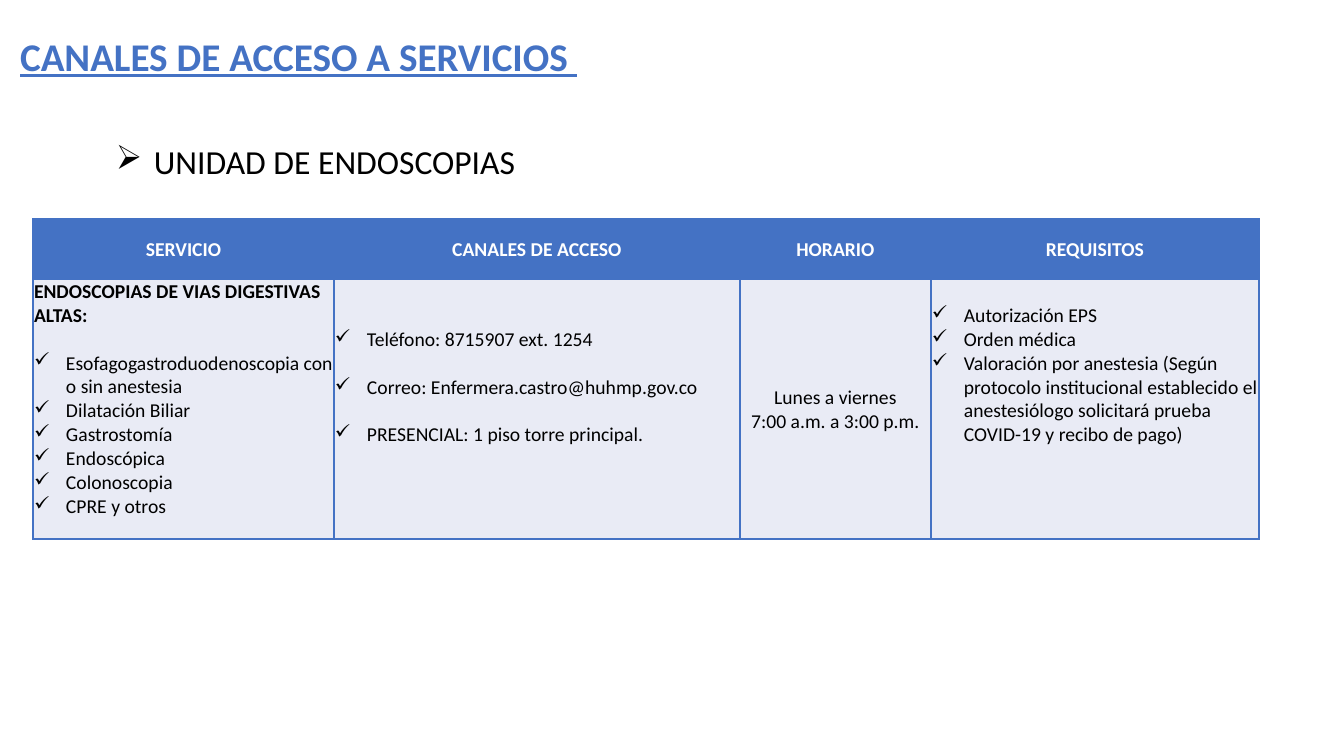
from dataclasses import dataclass

from lxml.etree import SubElement
from pptx import Presentation
from pptx.dml.color import RGBColor
from pptx.enum.text import MSO_ANCHOR as Anchor, MSO_AUTO_SIZE as AutoSize, PP_ALIGN as Align
from pptx.oxml.ns import qn
from pptx.util import Pt

EMU_PER_PX = 914400 / 100.8
LINE_GAP = 17  # points, one line of table text


@dataclass(frozen=True)
class Theme:
    font: str = "Calibri"
    blue: str = "4472C4"
    pale: str = "E9EBF5"
    white: str = "FFFFFF"
    black: str = "000000"
    title_size: int = 28
    subtitle_size: int = 24
    table_size: int = 14


THEME = Theme()

HEADINGS = ["SERVICIO", "CANALES DE ACCESO", "HORARIO", "REQUISITOS"]
COLUMN_WIDTHS = [301, 406, 191, 328]
SERVICES = [
    "Esofagogastroduodenoscopia con o sin anestesia", "Dilatación Biliar", "Gastrostomía",
    "Endoscópica", "Colonoscopia", "CPRE y otros",
]
CHANNELS = [
    "Teléfono: 8715907 ext. 1254",
    "Correo: Enfermera.castro@huhmp.gov.co",
    "PRESENCIAL: 1 piso torre principal.",
]
HOURS = ["Lunes a viernes", "7:00 a.m. a 3:00 p.m."]
REQUIREMENTS = [
    "Autorización EPS",
    "Orden médica",
    "Valoración por anestesia (Según protocolo institucional establecido el "
    "anestesiólogo solicitará prueba COVID-19 y recibo de pago)",
]


def px(length):
    return round(length * EMU_PER_PX)


def place(shape, box):
    shape.left, shape.top, shape.width, shape.height = map(px, box)


def write(frame, text, size=THEME.table_size, color=THEME.black, bold=False, underline=False,
          align=Align.LEFT, bullet=None, indent=32, before=0, spacing=None):
    """Write one paragraph, filling the empty first one before adding more."""
    first = frame.paragraphs[0]
    paragraph = frame.add_paragraph() if first.runs else first
    if bullet:
        properties = paragraph._p.get_or_add_pPr()
        properties.set("marL", str(px(indent)))
        properties.set("indent", str(-px(indent)))
        SubElement(properties, qn("a:buChar")).set("char", bullet)
    paragraph.alignment = align
    if before:
        paragraph.space_before = Pt(before)
    if spacing:
        paragraph.line_spacing = spacing
    run = paragraph.add_run()
    run.text = text
    font = run.font
    font.name, font.size, font.bold, font.underline = THEME.font, Pt(size), bold, underline
    font.color.rgb = RGBColor.from_string(color)


def write_checklist(frame, items, gap=0, first_gap=0):
    for index, item in enumerate(items):
        write(frame, item, bullet="✓", before=gap if index else first_gap)


def add_title(slide, box):
    title = slide.shapes.title
    place(title, box)
    frame = title.text_frame
    frame.auto_size, frame.vertical_anchor = AutoSize.NONE, Anchor.BOTTOM
    write(frame, "CANALES DE ACCESO A SERVICIOS ", size=THEME.title_size, color=THEME.blue,
          bold=True, underline=True, spacing=0.9)


def add_subtitle(slide, box):
    frame = slide.shapes.add_textbox(*map(px, box)).text_frame
    frame.word_wrap = True
    write(frame, "UNIDAD DE ENDOSCOPIAS", size=THEME.subtitle_size, bullet="➢", indent=38)


def style_cell(cell, fill, anchor, top=1):
    cell.margin_left = cell.margin_right = px(1)
    cell.margin_top, cell.margin_bottom = px(top), 0
    cell.vertical_anchor = anchor
    properties = cell._tc.get_or_add_tcPr()
    for side in ("lnL", "lnR", "lnT", "lnB"):
        line = SubElement(properties, qn(f"a:{side}"), w=str(Pt(1)))
        SubElement(SubElement(line, qn("a:solidFill")), qn("a:srgbClr"), val=THEME.blue)
    cell.fill.solid()
    cell.fill.fore_color.rgb = RGBColor.from_string(fill)


def add_services_table(slide, box, header_height=60):
    table = slide.shapes.add_table(2, len(HEADINGS), *map(px, box)).table
    table.first_row = table.horz_banding = False
    table.rows[0].height = px(header_height)
    table.rows[1].height = px(box[3] - header_height)
    for index, (heading, width) in enumerate(zip(HEADINGS, COLUMN_WIDTHS)):
        table.columns[index].width = px(width)
        cell = table.cell(0, index)
        style_cell(cell, THEME.blue, Anchor.MIDDLE)
        write(cell.text_frame, heading, color=THEME.white, bold=True, align=Align.CENTER)

    services, channels, hours, requirements = table.rows[1].cells
    style_cell(services, THEME.pale, Anchor.TOP)
    write(services.text_frame, "ENDOSCOPIAS DE VIAS DIGESTIVAS ALTAS:", bold=True)
    write_checklist(services.text_frame, SERVICES, first_gap=LINE_GAP)

    style_cell(channels, THEME.pale, Anchor.TOP, top=49)
    write_checklist(channels.text_frame, CHANNELS, gap=LINE_GAP)

    style_cell(hours, THEME.pale, Anchor.MIDDLE)
    for line in HOURS:
        write(hours.text_frame, line, align=Align.CENTER)

    style_cell(requirements, THEME.pale, Anchor.TOP, top=25)
    write_checklist(requirements.text_frame, REQUIREMENTS)


def main():
    presentation = Presentation()
    presentation.slide_width, presentation.slide_height = px(1344), px(756)
    slide = presentation.slides.add_slide(presentation.slide_layouts[5])
    add_title(slide, (10, 21, 922, 64))
    add_subtitle(slide, (106, 136, 526, 50))
    add_services_table(slide, (33, 219, sum(COLUMN_WIDTHS), 320))
    presentation.save("out.pptx")


if __name__ == "__main__":
    main()
